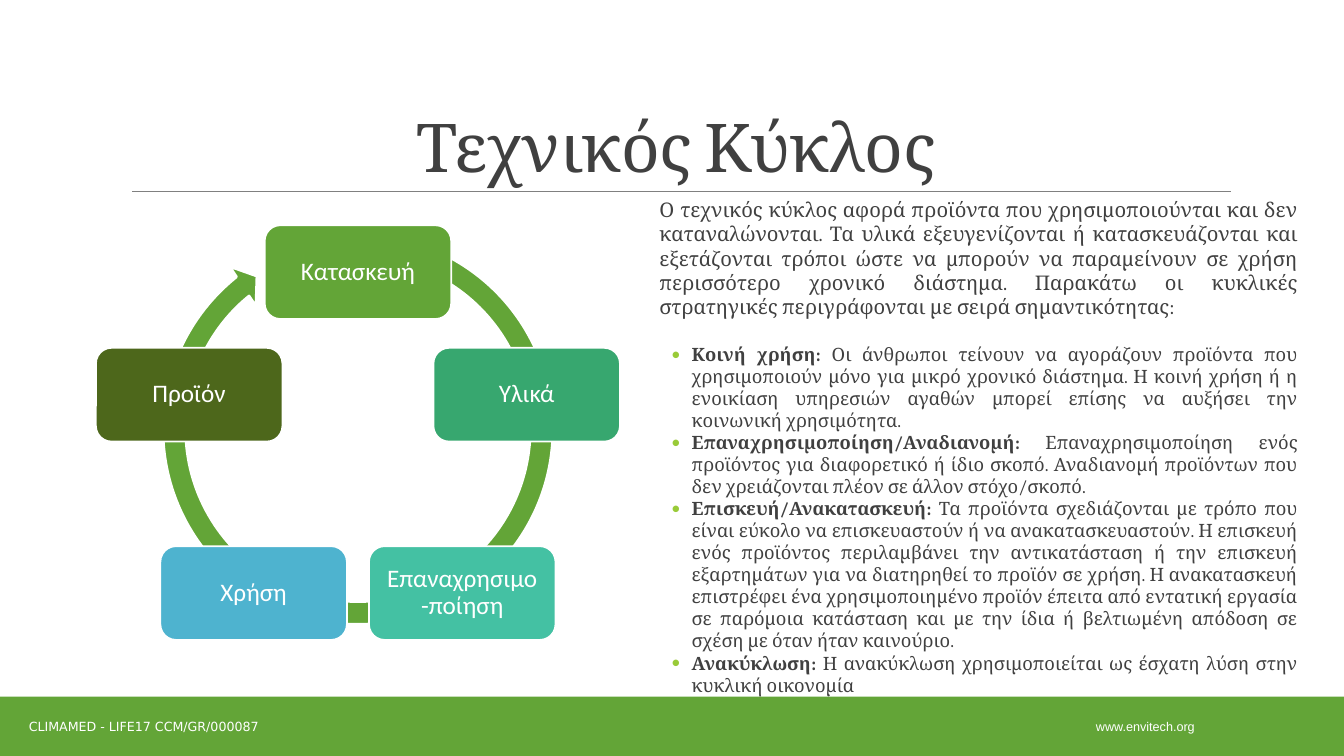
from math import cos, radians, sin

from lxml.etree import SubElement
from pptx import Presentation
from pptx.dml.color import RGBColor
from pptx.enum.shapes import MSO_CONNECTOR, MSO_SHAPE
from pptx.enum.text import MSO_ANCHOR, MSO_AUTO_SIZE, PP_ALIGN
from pptx.oxml.ns import qn
from pptx.util import Inches, Pt

TITLE = "Τεχνικός Κύκλος"
INTRO = (
    "Ο τεχνικός κύκλος αφορά προϊόντα που χρησιμοποιούνται και δεν καταναλώνονται. "
    "Τα υλικά εξευγενίζονται ή κατασκευάζονται και εξετάζονται τρόποι ώστε να μπορούν "
    "να παραμείνουν σε χρήση περισσότερο χρονικό διάστημα. Παρακάτω οι κυκλικές "
    "στρατηγικές περιγράφονται με σειρά σημαντικότητας:"
)
POINTS = [
    ("Κοινή χρήση: ",
     "Οι άνθρωποι τείνουν να αγοράζουν προϊόντα που χρησιμοποιούν μόνο για μικρό "
     "χρονικό διάστημα. Η κοινή χρήση ή η ενοικίαση υπηρεσιών αγαθών μπορεί επίσης "
     "να αυξήσει την κοινωνική χρησιμότητα."),
    ("Επαναχρησιμοποίηση/Αναδιανομή: ",
     "Επαναχρησιμοποίηση ενός προϊόντος για διαφορετικό ή ίδιο σκοπό. Αναδιανομή "
     "προϊόντων που δεν χρειάζονται πλέον σε άλλον στόχο/σκοπό."),
    ("Επισκευή/Ανακατασκευή: ",
     "Τα προϊόντα σχεδιάζονται με τρόπο που είναι εύκολο να επισκευαστούν ή να "
     "ανακατασκευαστούν. Η επισκευή ενός προϊόντος περιλαμβάνει την αντικατάσταση ή "
     "την επισκευή εξαρτημάτων για να διατηρηθεί το προϊόν σε χρήση. Η ανακατασκευή "
     "επιστρέφει ένα χρησιμοποιημένο προϊόν έπειτα από εντατική εργασία σε παρόμοια "
     "κατάσταση και με την ίδια ή βελτιωμένη απόδοση σε σχέση με όταν ήταν καινούριο."),
    ("Ανακύκλωση: ",
     "Η ανακύκλωση χρησιμοποιείται ως έσχατη λύση στην κυκλική οικονομία"),
]
STEPS = [  # clockwise from the top
    ("Κατασκευή", "63A537"),
    ("Υλικά", "37A76F"),
    ("Επαναχρησιμο-ποίηση", "44C1A3"),
    ("Χρήση", "4EB3CF"),
    ("Προϊόν", "4D671B"),
]
FOOTERS = [  # text, font, left, width
    ("www.envitech.org", "Arial", 10.13, 2.46),
    ("CLIMAMED - LIFE17 CCM/GR/000087", "DejaVu Sans", 0.1, 2.65),
]
GREEN, LIME, DARK, WHITE = "63A537", "99CB38", "404040", "FFFFFF"
HUB_X, HUB_Y, RADIUS = 3.55, 4.46, 1.76
STEP_W, STEP_H = 1.85, 0.93
RING = 4.12
RING_ADJ = (0.055, 3.307, 138.684, 173.3, 0.058)


def color(code):
    return RGBColor.from_string(code)


def style(font, name, size, code, bold=None):
    font.name, font.size, font.bold = name, Pt(size), bold
    font.color.rgb = color(code)


def add_form(slide, kind, box, fill, edge=0):
    form = slide.shapes.add_shape(kind, *map(Inches, box))
    form.shadow.inherit = False
    form.fill.solid()
    form.fill.fore_color.rgb = color(fill)
    if edge:
        form.line.color.rgb = color(WHITE)
        form.line.width = Pt(edge)
    else:
        form.line.fill.background()
    return form


def add_title(slide):
    title = slide.shapes.title
    title.left, title.top = Inches(1.2), Inches(0.31)
    title.width, title.height = Inches(11), Inches(1.59)
    frame = title.text_frame
    frame.text = TITLE
    frame.auto_size = MSO_AUTO_SIZE.NONE
    frame.vertical_anchor = MSO_ANCHOR.BOTTOM
    para = frame.paragraphs[0]
    para.alignment, para.line_spacing = PP_ALIGN.CENTER, 0.85
    run = para.runs[0]
    style(run.font, "Cambria", 48, DARK)
    run.font._element.set("spc", "-50")

    rule = slide.shapes.add_connector(
        MSO_CONNECTOR.STRAIGHT, Inches(1.31), Inches(1.9), Inches(12.21), Inches(1.9))
    rule.line.color.rgb = color("808080")
    rule.line.width = Pt(0.5)
    SubElement(rule._element.spPr, qn("a:effectLst"))


def add_footer(slide):
    add_form(slide, MSO_SHAPE.RECTANGLE, (0, 6.91, 13.33, 0.59), GREEN)
    for text, name, left, width in FOOTERS:
        box = slide.shapes.add_textbox(
            Inches(left), Inches(7.01), Inches(width), Inches(0.4))
        frame = box.text_frame
        frame.word_wrap = True
        frame.vertical_anchor = MSO_ANCHOR.MIDDLE
        frame.text = text
        para = frame.paragraphs[0]
        para.alignment = PP_ALIGN.CENTER
        style(para.runs[0].font, name, 9, WHITE)


def indent(para, left, first=0):
    props = para._p.get_or_add_pPr()
    props.set("marL", str(Inches(left)))
    props.set("indent", str(Inches(first)))
    return props


def add_bullet(para):
    props = indent(para, 0.42, -0.2)
    tint = SubElement(props, qn("a:buClr"))
    SubElement(tint, qn("a:srgbClr"), val=LIME)
    SubElement(props, qn("a:buFont"), typeface="Calibri")
    SubElement(props, qn("a:buChar"), char="•")


def add_body(slide):
    box = slide.shapes.add_textbox(
        Inches(6.44), Inches(1.91), Inches(6.43), Inches(5.02))
    frame = box.text_frame
    frame.word_wrap = True
    frame.margin_left = frame.margin_right = 0
    frame.text = INTRO
    intro = frame.paragraphs[0]
    indent(intro, 0.1)
    intro.alignment, intro.line_spacing = PP_ALIGN.JUSTIFY, Pt(17.3)
    style(intro.runs[0].font, "Cambria", 14.4, DARK)

    for index, parts in enumerate(POINTS):
        para = frame.add_paragraph()
        para.level = 1
        add_bullet(para)
        para.alignment, para.line_spacing = PP_ALIGN.JUSTIFY, Pt(15.75)
        para.space_before = Pt(0 if index else 17.3)
        for text, bold in zip(parts, (True, False)):
            run = para.add_run()
            run.text = text
            style(run.font, "Cambria", 13.1, DARK, bold)


def add_cycle(slide):
    ring = add_form(slide, MSO_SHAPE.CIRCULAR_ARROW,
                    (HUB_X - RING / 2, 2.2, RING, RING), GREEN, 2)
    for index, value in enumerate(RING_ADJ):
        ring.adjustments[index] = value

    for index, (text, fill) in enumerate(STEPS):
        angle = radians(360 / len(STEPS) * index - 90)
        left = HUB_X + RADIUS * cos(angle) - STEP_W / 2
        top = HUB_Y + RADIUS * sin(angle) - STEP_H / 2
        step = add_form(slide, MSO_SHAPE.ROUNDED_RECTANGLE,
                        (left, top, STEP_W, STEP_H), fill, 1.25)
        frame = step.text_frame
        frame.word_wrap = True
        frame.vertical_anchor = MSO_ANCHOR.MIDDLE
        frame.margin_left = frame.margin_right = Inches(0.11)
        frame.text = text
        para = frame.paragraphs[0]
        para.alignment, para.line_spacing = PP_ALIGN.CENTER, 0.9
        style(para.runs[0].font, "Calibri", 18, WHITE)


def main():
    deck = Presentation()
    deck.slide_width, deck.slide_height = Inches(13.33), Inches(7.5)
    slide = deck.slides.add_slide(deck.slide_layouts[5])
    add_footer(slide)
    add_title(slide)
    add_body(slide)
    add_cycle(slide)
    deck.save("out.pptx")


if __name__ == "__main__":
    main()
